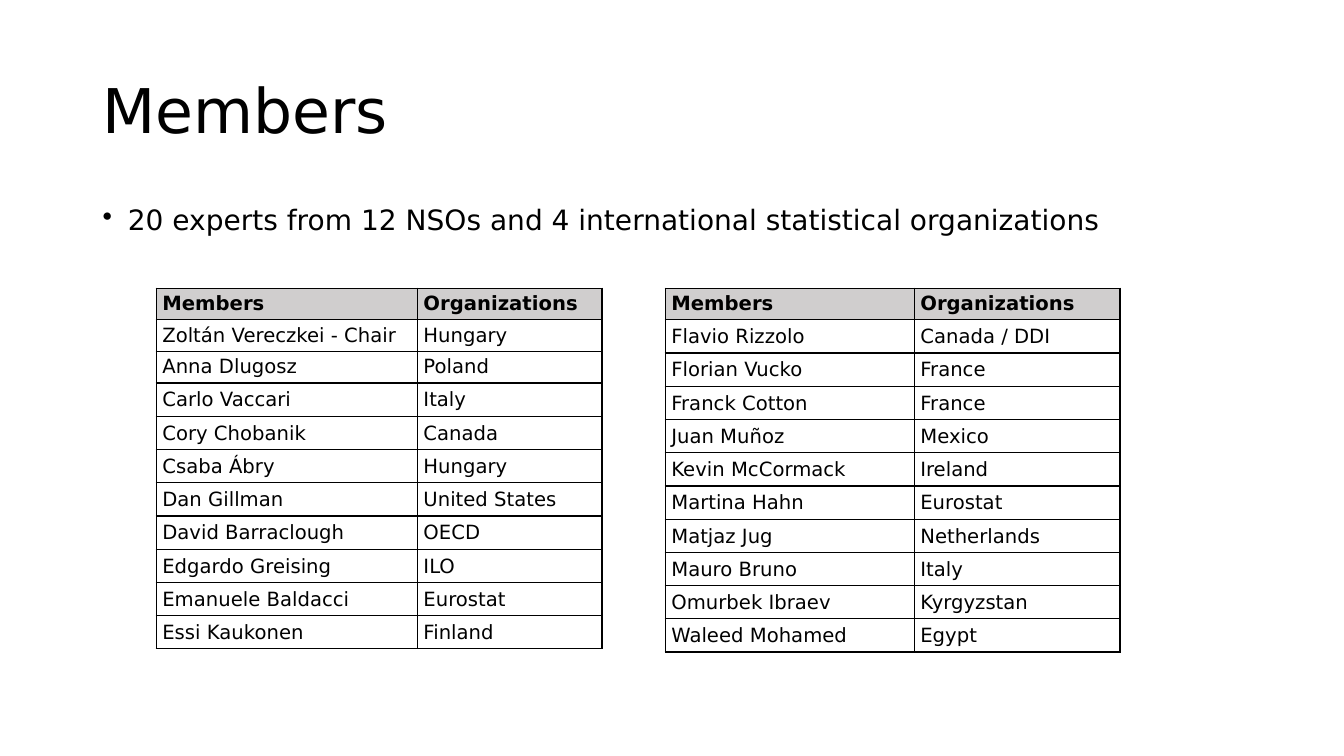
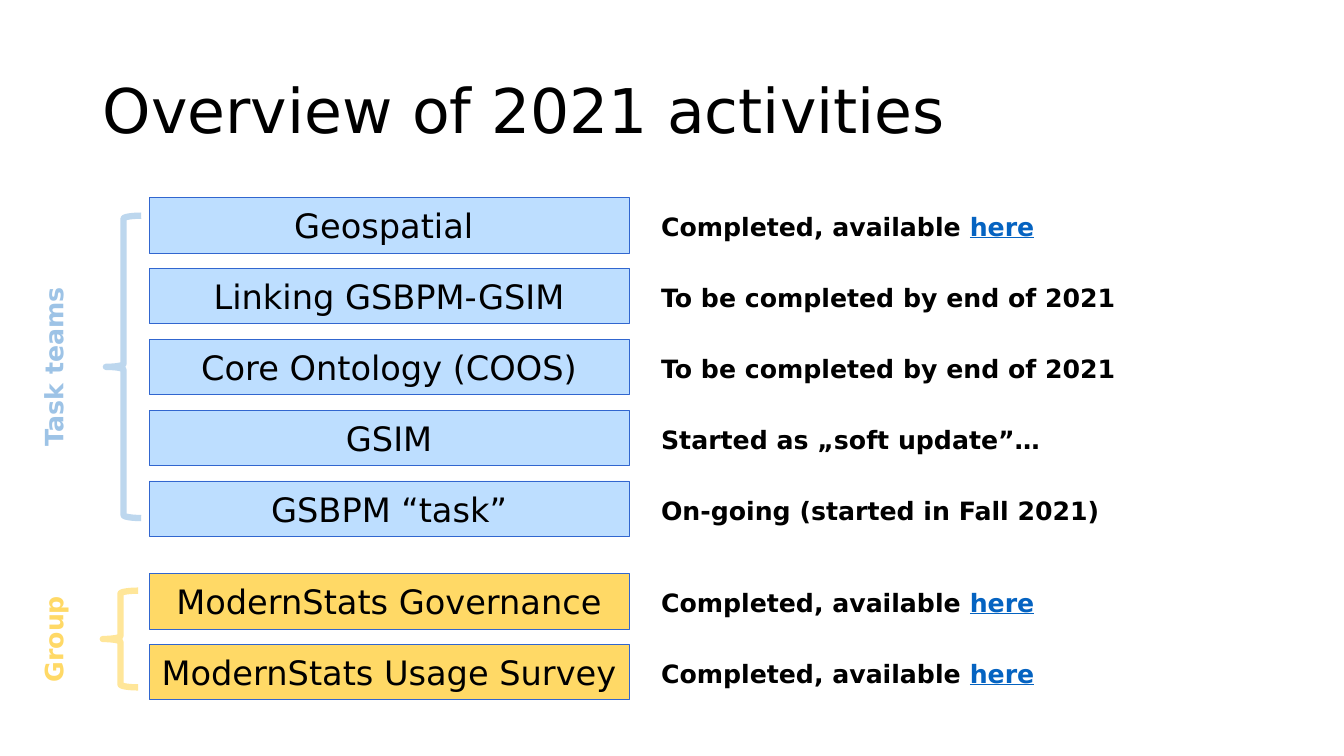
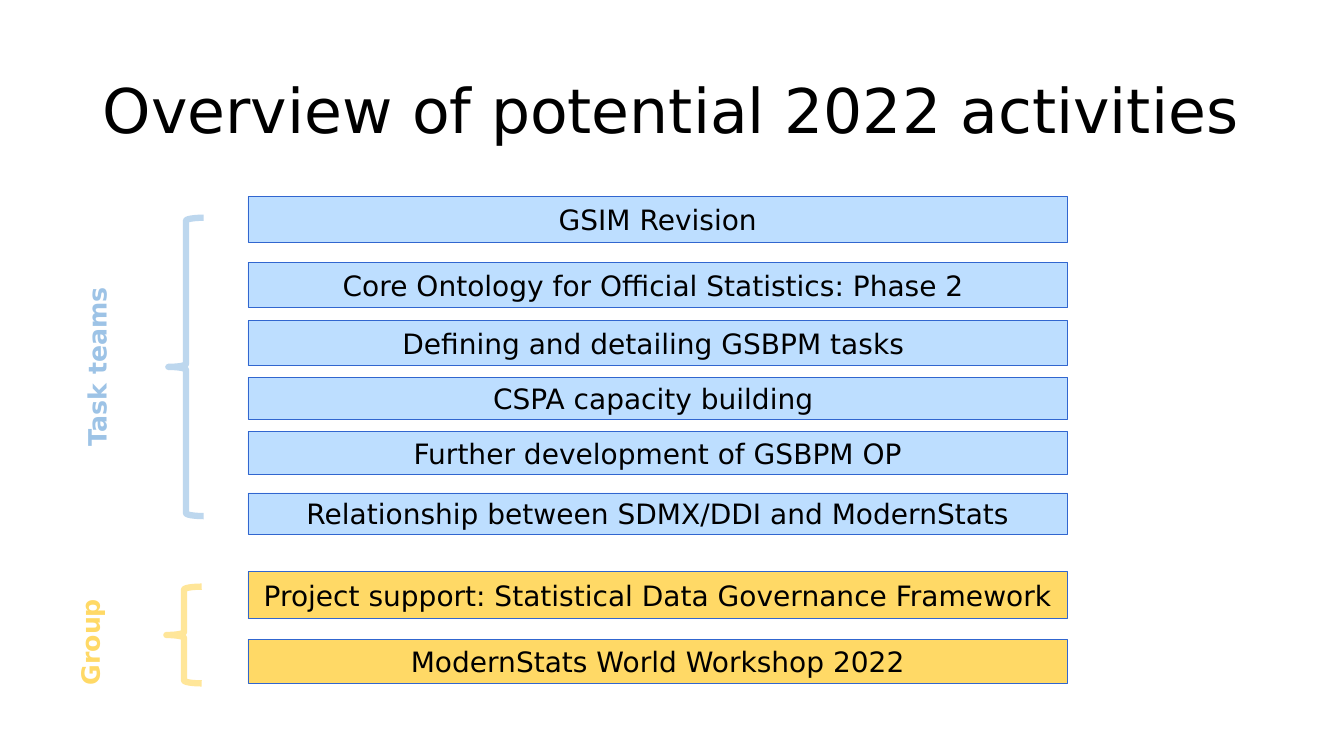
"""Build three slides on the members and the activities of a group."""
from dataclasses import dataclass

from lxml.etree import SubElement
from pptx import Presentation
from pptx.dml.color import RGBColor
from pptx.enum.shapes import MSO_SHAPE
from pptx.enum.text import MSO_ANCHOR, PP_ALIGN
from pptx.oxml import parse_xml
from pptx.oxml.ns import nsdecls, qn
from pptx.util import Inches, Pt

WIDTH, HEIGHT = Inches(13.33), Inches(7.5)
FONT = "DejaVu Sans"
BLACK, WHITE, GREY = "000000", "FFFFFF", "D0CECE"
EDGE, LINK = "3166CF", "0563C1"


@dataclass
class Box:
    """A frame in percent of the slide's width and height."""
    left: float
    top: float
    width: float
    height: float

    def frame(self) -> tuple:
        """Return the frame as slide lengths."""
        return wide(self.left), high(self.top), wide(self.width), high(self.height)


@dataclass
class Style:
    """How a text looks."""
    size: int
    color: str = BLACK
    bold: bool = False
    align: PP_ALIGN = PP_ALIGN.LEFT
    space: float = 1.0


@dataclass
class Team:
    """The colours and the name of a set of activities."""
    name: str
    fill: str
    brace: str
    ink: str


@dataclass
class Bar:
    """One activity, with its place down the slide and its status."""
    text: str
    team: Team
    top: float
    height: float
    note: str = ""
    link: str = ""


@dataclass
class Side:
    """A brace and the upright label beside it."""
    team: Team
    brace: Box
    label: Box


@dataclass
class Roster:
    """A table of members, the first rows of which are tight."""
    left: float
    cols: tuple
    tight: int
    rows: list


TITLE = Style(44, space=0.9)
POINT = Style(20, space=0.9)
NOTE = Style(18, bold=True)
TASK = Team("Task teams", "BDDEFF", "BDD7EE", "9DC3E6")
GROUP = Team("Group", "FFD966", "FFE699", "FFD966")

HEADS = ("Members", "Organizations")
ROSTERS = [
    Roster(11.63, (19.43, 13.73), 3, [
        ("Zoltán Vereczkei - Chair", "Hungary"),
        ("Anna Dlugosz", "Poland"),
        ("Carlo Vaccari", "Italy"),
        ("Cory Chobanik", "Canada"),
        ("Csaba Ábry", "Hungary"),
        ("Dan Gillman", "United States"),
        ("David Barraclough", "OECD"),
        ("Edgardo Greising", "ILO"),
        ("Emanuele Baldacci", "Eurostat"),
        ("Essi Kaukonen", "Finland"),
    ]),
    Roster(49.5, (18.53, 15.3), 1, [
        ("Flavio Rizzolo", "Canada / DDI"),
        ("Florian Vucko", "France"),
        ("Franck Cotton", "France"),
        ("Juan Muñoz", "Mexico"),
        ("Kevin McCormack", "Ireland"),
        ("Martina Hahn", "Eurostat"),
        ("Matjaz Jug", "Netherlands"),
        ("Mauro Bruno", "Italy"),
        ("Omurbek Ibraev", "Kyrgyzstan"),
        ("Waleed Mohamed", "Egypt"),
    ]),
]

DONE, DUE = "Completed, available ", "To be completed by end of 2021"
STEP, TALL = 9.37, 7.33
TASKS = [
    ("Geospatial ", DONE, "here"),
    ("Linking GSBPM-GSIM", DUE, ""),
    ("Core Ontology (COOS)", DUE, ""),
    ("GSIM", "Started as „soft update”…", ""),
    ("GSBPM “task”", "On-going (started in Fall 2021)", ""),
]
JOBS = [
    ("ModernStats Governance", DONE, "here"),
    ("ModernStats Usage Survey", DONE, "here"),
]
PLANS = [
    Bar("GSIM Revision", TASK, 26, 6),
    Bar("Core Ontology for Official Statistics: Phase 2 ", TASK, 34.67, 6),
    Bar("Defining and detailing GSBPM tasks ", TASK, 42.4, 6),
    Bar("CSPA capacity building ", TASK, 49.87, 5.6),
    Bar("Further development of GSBPM OP", TASK, 57.07, 5.73),
    Bar("Relationship between SDMX/DDI and ModernStats", TASK, 65.2, 5.47),
    Bar("Project support: Statistical Data Governance Framework", GROUP, 75.6, 6.27),
    Bar("ModernStats World Workshop 2022", GROUP, 84.53, 5.87),
]
SIDES = [
    Side(TASK, Box(7.88, 28.53, 2.63, 40), Box(2.48, 33.47, 3.75, 30.13)),
    Side(GROUP, Box(7.65, 78.13, 2.63, 12.8), Box(2.48, 75.2, 3.75, 18.67)),
]
FLANKS = [
    Side(TASK, Box(12.53, 28.8, 2.63, 39.47), Box(5.7, 33.47, 3.75, 30.13)),
    Side(GROUP, Box(12.38, 77.6, 2.63, 12.8), Box(5.18, 75.6, 3.75, 18.67)),
]


def wide(share: float) -> int:
    """Turn a percentage of the slide's width into a length."""
    return round(WIDTH * share / 100)


def high(share: float) -> int:
    """Turn a percentage of the slide's height into a length."""
    return round(HEIGHT * share / 100)


def paint(part, color: str) -> None:
    """Give a fill or a font one solid colour."""
    if hasattr(part, "solid"):
        part.solid()
        part.fore_color.rgb = RGBColor.from_string(color)
    else:
        part.color.rgb = RGBColor.from_string(color)


def write(frame, text: str, style: Style):
    """Write one styled paragraph and return it."""
    para = frame.paragraphs[0]
    para.add_run().text = text
    para.alignment = style.align
    para.line_spacing = style.space
    font = para.font
    font.name, font.size, font.bold = FONT, Pt(style.size), style.bold
    paint(font, style.color)
    return para


def label(slide, box: Box, text: str, style: Style, anchor=MSO_ANCHOR.TOP, turn: str = "horz"):
    """Add a wrapped text box and return its paragraph."""
    frame = slide.shapes.add_textbox(*box.frame()).text_frame
    frame.word_wrap = True
    frame.vertical_anchor = anchor
    frame._txBody.bodyPr.set("vert", turn)
    return write(frame, text, style)


def shape(slide, kind: MSO_SHAPE, box: Box, line: str, weight: float):
    """Add an outlined shape without shadow."""
    item = slide.shapes.add_shape(kind, *box.frame())
    item.shadow.inherit = False
    paint(item.line.fill, line)
    item.line.width = Pt(weight)
    return item


def start(deck, title: str):
    """Add a blank slide with a title."""
    slide = deck.slides.add_slide(deck.slide_layouts[6])
    label(slide, Box(6.9, 5.33, 88.4, 19.33), title, TITLE, MSO_ANCHOR.MIDDLE)
    return slide


def bullet(slide, box: Box, text: str) -> None:
    """Add a bulleted line."""
    para = label(slide, box, text, POINT)
    para.space_before = Pt(10)
    props = para._p.get_or_add_pPr()
    props.set("marL", str(Inches(0.25)))
    props.set("indent", str(-Inches(0.25)))
    mark = SubElement(props, qn("a:buChar"))
    mark.set("char", "•")
    props.remove(mark)
    props.find(qn("a:defRPr")).addprevious(mark)


def border(cell) -> None:
    """Rule all four sides of a cell in black."""
    props = cell._tc.get_or_add_tcPr()
    for spot, side in enumerate("LRTB"):
        props.insert(spot, parse_xml(
            f'<a:ln{side} {nsdecls("a")} w="{Pt(1)}"><a:solidFill>'
            f'<a:srgbClr val="{BLACK}"/></a:solidFill></a:ln{side}>'))


def roster(slide, data: Roster) -> None:
    """Add one table of members."""
    rows = [HEADS, *data.rows]
    sizes = [4 if row < data.tight else 4.27 for row in range(len(rows))]
    box = Box(data.left, 38.13, sum(data.cols), sum(sizes))
    table = slide.shapes.add_table(len(rows), len(HEADS), *box.frame()).table
    table.first_row = table.horz_banding = False
    for col, width in enumerate(data.cols):
        table.columns[col].width = wide(width)
    for row, texts in enumerate(rows):
        table.rows[row].height = high(sizes[row])
        style = Style(14, bold=row == 0, space=1 if row < data.tight else 1.07)
        for col, text in enumerate(texts):
            cell = table.cell(row, col)
            cell.margin_left = cell.margin_right = Inches(0.06)
            cell.margin_top = cell.margin_bottom = Inches(0.04)
            paint(cell.fill, WHITE if row else GREY)
            border(cell)
            write(cell.text_frame, text, style)


def stack(first: float, team: Team, items: list) -> list:
    """Place activities at equal steps."""
    return [Bar(text, team, first + STEP * spot, TALL, note, link)
            for spot, (text, note, link) in enumerate(items)]


def status(slide, bar: Bar) -> None:
    """Write the status beside an activity."""
    para = label(slide, Box(48.45, bar.top + 1.2, 37.5, 5.33), bar.note, NOTE)
    if bar.link:
        run = para.add_run()
        run.text = bar.link
        run.font.underline = True
        paint(run.font, LINK)


def chart(slide, left: float, width: float, size: int, bars: list, sides: list) -> None:
    """Draw the activities, their status and the braces."""
    style = Style(size, align=PP_ALIGN.CENTER)
    for bar in bars:
        box = Box(left, bar.top, width, bar.height)
        item = shape(slide, MSO_SHAPE.RECTANGLE, box, EDGE, 0.5)
        paint(item.fill, bar.team.fill)
        item.text_frame.word_wrap = True
        item.text_frame.vertical_anchor = MSO_ANCHOR.MIDDLE
        write(item.text_frame, bar.text, style)
        if bar.note:
            status(slide, bar)
    for side in sides:
        brace = shape(slide, MSO_SHAPE.LEFT_BRACE, side.brace, side.team.brace, 4.5)
        brace.fill.background()
        ink = Style(18, side.team.ink, True, PP_ALIGN.CENTER)
        label(slide, side.label, side.team.name, ink, turn="vert270")


def main() -> None:
    """Build and save the deck."""
    deck = Presentation()
    deck.slide_width, deck.slide_height = WIDTH, HEIGHT

    slide = start(deck, "Members")
    bullet(slide, Box(6.9, 26.67, 86.25, 8.27),
           "20 experts from 12 NSOs and 4 international statistical organizations")
    for data in ROSTERS:
        roster(slide, data)

    slide = start(deck, "Overview of 2021 activities")
    bars = stack(26.13, TASK, TASKS) + stack(75.87, GROUP, JOBS)
    chart(slide, 11.1, 35.7, 24, bars, SIDES)

    slide = start(deck, "Overview of potential 2022 activities")
    chart(slide, 18.45, 60.98, 20, PLANS, FLANKS)

    deck.save("out.pptx")


if __name__ == "__main__":
    main()
